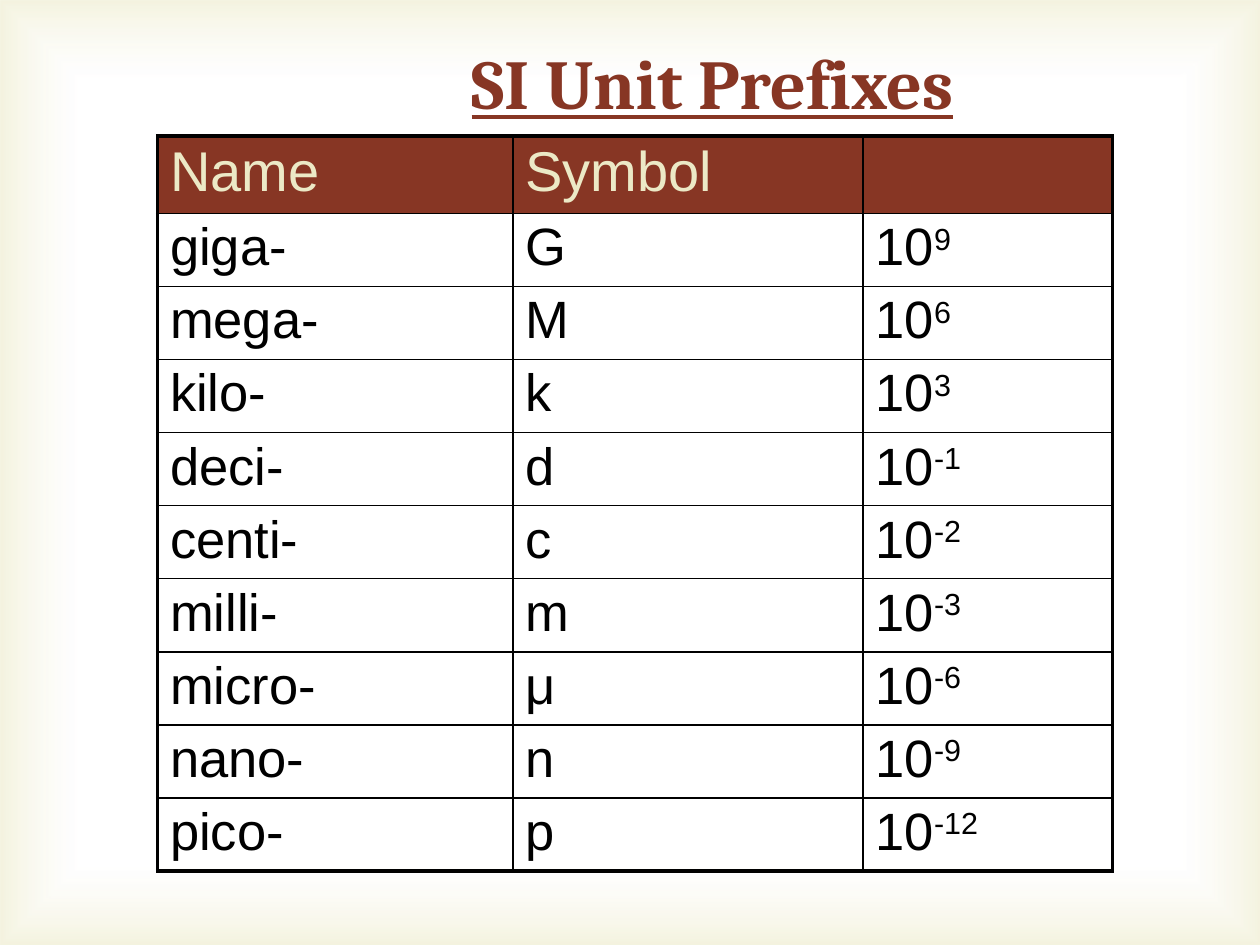
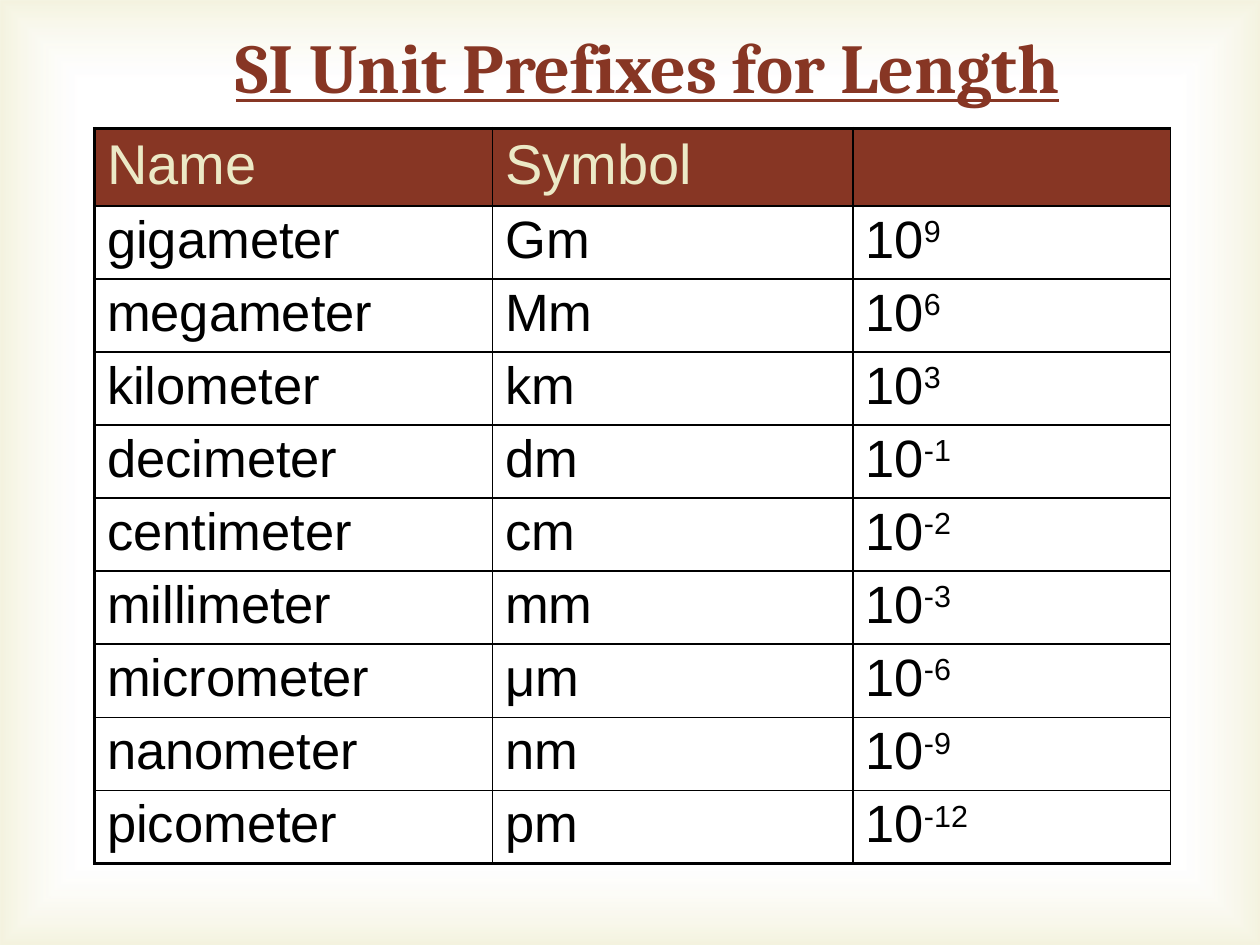
"""Builds two slides with tables of SI unit prefixes."""
from dataclasses import dataclass

from lxml.etree import SubElement
from pptx import Presentation
from pptx.dml.color import RGBColor
from pptx.enum.shapes import MSO_SHAPE
from pptx.enum.text import MSO_ANCHOR, PP_ALIGN
from pptx.oxml import parse_xml
from pptx.oxml.ns import nsdecls, qn
from pptx.util import Inches, Pt


@dataclass(frozen=True)
class Theme:
    brick: str = "873624"
    cream: str = "ECE9C6"
    olive: str = "D1CA75"
    white: str = "FFFFFF"
    black: str = "000000"
    title_font: str = "Cambria"
    body_font: str = "Arial"
    title_size: int = 40
    header_size: int = 32
    body_size: int = 30
    thin: float = 1
    thick: float = 2.25


THEME = Theme()
HEADINGS = ("Name", "Symbol", "")
PREFIXES = [
    ("giga", "G", "9"),
    ("mega", "M", "6"),
    ("kilo", "k", "3"),
    ("deci", "d", "-1"),
    ("centi", "c", "-2"),
    ("milli", "m", "-3"),
    ("micro", "μ", "-6"),
    ("nano", "n", "-9"),
    ("pico", "p", "-12"),
]
HEADER_HEIGHT = Inches(0.59)
BODY_HEIGHT = Inches(5.09)


def style_run(r, font, size, color):
    r.font.name = font
    r.font.size = Pt(size)
    r.font.color.rgb = RGBColor.from_string(color)


def add_glow(slide, prs):
    sp = slide.shapes.add_shape(
        MSO_SHAPE.RECTANGLE, 0, 0, prs.slide_width, prs.slide_height)
    sp.shadow.inherit = False
    sp.line.fill.background()
    stops = "".join(
        f'<a:gs pos="{pos}000"><a:srgbClr val="{color}">'
        f'<a:alpha val="{alpha}000"/></a:srgbClr></a:gs>'
        for pos, color, alpha in ((83, THEME.white, 11), (100, THEME.olive, 23)))
    gradient = parse_xml(
        f'<a:gradFill {nsdecls("a")} rotWithShape="1"><a:gsLst>{stops}</a:gsLst>'
        '<a:path path="rect"><a:fillToRect l="50000" t="50000" r="50000" b="50000"/>'
        '</a:path></a:gradFill>')
    sp._element.spPr.find(qn("a:prstGeom")).addnext(gradient)


def add_title(slide, text, box):
    tf = slide.shapes.add_textbox(*map(Inches, box)).text_frame
    tf.word_wrap = True
    tf.vertical_anchor = MSO_ANCHOR.MIDDLE
    tf.text = text
    p = tf.paragraphs[0]
    p.alignment = PP_ALIGN.CENTER
    r = p.runs[0]
    style_run(r, THEME.title_font, THEME.title_size, THEME.brick)
    r.font.bold = r.font.underline = True


def set_borders(cell, thick_sides):
    tc_pr = cell._tc.get_or_add_tcPr()
    for i, side in enumerate("LRTB"):
        width = THEME.thick if side in thick_sides else THEME.thin
        ln = SubElement(tc_pr, qn(f"a:ln{side}"), w=str(Pt(width)))
        fill = SubElement(ln, qn("a:solidFill"))
        SubElement(fill, qn("a:srgbClr"), val=THEME.black)
        tc_pr.insert(i, ln)


def fill_cell(cell, text, is_header, exponent=""):
    cell.margin_top = cell.margin_bottom = Inches(0.04)
    p = cell.text_frame.paragraphs[0]
    p.text = text
    if exponent:
        p.add_run().text = exponent
        p.runs[1].font._element.set("baseline", "30000")
    if is_header:
        cell.fill.solid()
        cell.fill.fore_color.rgb = RGBColor.from_string(THEME.brick)
        size, color = THEME.header_size, THEME.cream
    else:
        cell.fill.background()
        size, color = THEME.body_size, THEME.black
    for r in p.runs:
        style_run(r, THEME.body_font, size, color)


def add_prefix_table(slide, left, top, widths, suffix, unit, thick_edges):
    rows = [(*HEADINGS, "")]
    rows += [(name + suffix, symbol + unit, "10", power)
             for name, symbol, power in PREFIXES]
    table = slide.shapes.add_table(
        len(rows), len(widths), Inches(left), Inches(top),
        Inches(sum(widths)), HEADER_HEIGHT + BODY_HEIGHT).table
    for column, width in zip(table.columns, widths):
        column.width = Inches(width)
    last_row, last_col = len(rows) - 1, len(widths) - 1
    for i, (*texts, exponent) in enumerate(rows):
        table.rows[i].height = BODY_HEIGHT // len(PREFIXES) if i else HEADER_HEIGHT
        for j, text in enumerate(texts):
            cell = table.cell(i, j)
            fill_cell(cell, text, i == 0, exponent if j == last_col else "")
            edges = {"L": j == 0, "R": j == last_col, "T": i == 0, "B": i == last_row}
            set_borders(cell, [side for side in thick_edges if edges[side]])


def add_prefix_slide(prs, title, title_box, **table):
    slide = prs.slides.add_slide(prs.slide_layouts[6])
    add_glow(slide, prs)
    add_title(slide, title, title_box)
    add_prefix_table(slide, **table)


def main():
    prs = Presentation()
    prs.slide_width, prs.slide_height = Inches(10), Inches(7.5)
    add_prefix_slide(
        prs, "SI Unit Prefixes", (2.42, 0.3, 6.47, 0.7),
        left=1.25, top=1.08, widths=(2.82, 2.78, 1.98),
        suffix="-", unit="", thick_edges="LRTB")
    add_prefix_slide(
        prs, "SI Unit Prefixes for Length", (0.85, 0.23, 8.58, 0.58),
        left=0.75, top=1.02, widths=(3.16, 2.86, 2.52),
        suffix="meter", unit="m", thick_edges="LTB")
    prs.save("out.pptx")


if __name__ == "__main__":
    main()
